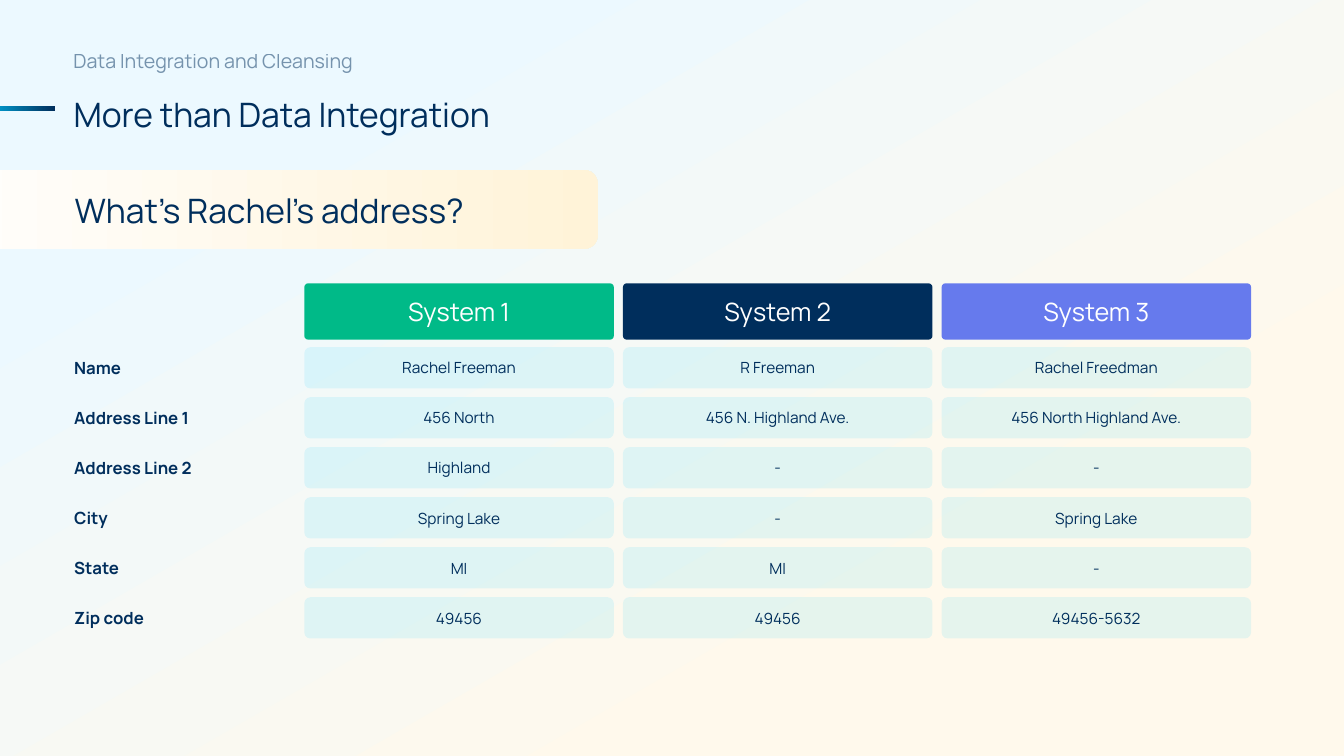
from dataclasses import dataclass

import pptx
import pptx.dml.color
import pptx.enum.shapes
import pptx.enum.text
import pptx.oxml
import pptx.oxml.ns
import pptx.util
from lxml import etree

Cm = pptx.util.Cm
Align = pptx.enum.text.PP_ALIGN
Anchor = pptx.enum.text.MSO_ANCHOR
AutoSize = pptx.enum.text.MSO_AUTO_SIZE
Preset = pptx.enum.shapes.MSO_SHAPE

FONT = "Manrope"
NAVY = "002E5C"
CYAN = "00C9FF"
WHITE = "FFFFFF"

COLUMN_LEFT, COLUMN_PITCH, COLUMN_WIDTH = 7.67, 8.03, 7.8
ROW_TOP, ROW_PITCH, ROW_HEIGHT = 8.75, 1.26, 1.04
HEADER_TOP, HEADER_HEIGHT = 7.14, 1.42
LABEL_LEFT, LABEL_DROP, LABEL_HEIGHT = 1.62, 0.14, 0.77


@dataclass(frozen=True)
class Area:
    left: float
    top: float
    width: float
    height: float


@dataclass(frozen=True)
class Style:
    size: float
    color: str = NAVY
    bold: bool = False
    align: Align = Align.LEFT
    anchor: Anchor = Anchor.TOP
    line_spacing: float = 1.0
    paragraph_gap: float = 0


@dataclass(frozen=True)
class Gradient:
    start: str
    end: str
    start_at: float = 0
    end_at: float = 1
    clockwise: float = 0


@dataclass(frozen=True)
class System:
    name: str
    color: str


@dataclass(frozen=True)
class Field:
    label: str
    label_width: float
    values: tuple[str, str, str]


SYSTEMS = (System("System 1", "00BA88"), System("System 2", NAVY), System("System 3", "667AED"))
FIELDS = (
    Field("Name", 1.83, ("Rachel Freeman", "R Freeman", "Rachel Freedman")),
    Field("Address Line 1", 3.58, ("456 North", "456 N. Highland Ave.", "456 North Highland Ave.")),
    Field("Address Line 2", 3.66, ("Highland", "-", "-")),
    Field("City", 1.4, ("Spring Lake", "-", "Spring Lake")),
    Field("State", 1.68, ("MI", "MI", "-")),
    Field("Zip code", 2.36, ("49456", "49456", "49456-5632")),
)

HEADING = Style(24, line_spacing=1.3, paragraph_gap=3)
KICKER = Style(14, line_spacing=1.3, paragraph_gap=3)
QUESTION = Style(24, anchor=Anchor.MIDDLE)
LABEL = Style(12, bold=True)
HEADER = Style(18, WHITE, align=Align.CENTER, anchor=Anchor.MIDDLE)
VALUE = Style(11, align=Align.CENTER, anchor=Anchor.MIDDLE)


def rgb(color: str) -> pptx.dml.color.RGBColor:
    return pptx.dml.color.RGBColor.from_string(color)


def place(shape, area: Area) -> None:
    shape.left, shape.top = Cm(area.left), Cm(area.top)
    shape.width, shape.height = Cm(area.width), Cm(area.height)


def fade(shape, percent: int) -> None:
    color = shape.element.find(".//" + pptx.oxml.ns.qn("a:srgbClr"))
    etree.SubElement(color, pptx.oxml.ns.qn("a:alpha")).set("val", str(percent * 1000))


def write(shape, text: str, style: Style, wrap: bool = True) -> None:
    frame = shape.text_frame
    frame.word_wrap = wrap
    frame.auto_size = AutoSize.NONE if wrap else AutoSize.SHAPE_TO_FIT_TEXT
    frame.vertical_anchor = style.anchor
    para = frame.paragraphs[0]
    para.alignment = style.align
    para.line_spacing = style.line_spacing
    para.space_before = para.space_after = pptx.util.Pt(style.paragraph_gap)
    span = para.add_run()
    span.text = text
    span.font.name = FONT
    span.font.size = pptx.util.Pt(style.size)
    span.font.bold = style.bold
    span.font.color.rgb = rgb(style.color)


def add_text(page, area: Area, text: str, style: Style, wrap: bool = True):
    box = page.shapes.add_textbox(Cm(area.left), Cm(area.top), Cm(area.width), Cm(area.height))
    write(box, text, style, wrap)
    return box


def add_panel(page, area: Area, fill: str | Gradient, corner: float = 0):
    preset = Preset.ROUNDED_RECTANGLE if corner else Preset.RECTANGLE
    panel = page.shapes.add_shape(preset, Cm(area.left), Cm(area.top), Cm(area.width), Cm(area.height))
    if corner:
        panel.adjustments[0] = corner
    panel.shadow.inherit = False
    panel.line.fill.background()
    if isinstance(fill, Gradient):
        panel.fill.gradient()
        panel.fill.gradient_angle = -fill.clockwise % 360
        first, last = panel.fill.gradient_stops
        first.color.rgb, first.position = rgb(fill.start), fill.start_at
        last.color.rgb, last.position = rgb(fill.end), fill.end_at
    else:
        panel.fill.solid()
        panel.fill.fore_color.rgb = rgb(fill)
    return panel


def add_heading(page) -> None:
    title = page.shapes.title
    place(title, Area(1.6, 1.93, 14.63, 1.3))
    write(title, "More than Data Integration", HEADING)
    backdrop = add_panel(page, Area(0, -0.28, 33.87, 19.76), Gradient("ECF9FF", "FFF9EC", 0.18, 0.75, 60))
    title.element.addprevious(backdrop.element)
    kicker = add_text(page, Area(1.6, 0.94, 14.17, 1.3), "Data Integration and Cleansing", KICKER)
    fade(kicker, 50)
    add_panel(page, Area(-0.79, 2.67, 2.18, 0.13), Gradient(CYAN, NAVY))
    add_panel(page, Area(-2.59, 4.29, 17.65, 1.98), Gradient(WHITE, "FFF3D8"), 0.1667)
    add_text(page, Area(1.63, 4.65, 13.67, 1.3), "What’s Rachel’s address?", QUESTION)


def add_comparison(page) -> None:
    for row, field in enumerate(FIELDS):
        top = ROW_TOP + row * ROW_PITCH + LABEL_DROP
        add_text(page, Area(LABEL_LEFT, top, field.label_width, LABEL_HEIGHT), field.label, LABEL, wrap=False)
    for column, system in enumerate(SYSTEMS):
        left = COLUMN_LEFT + column * COLUMN_PITCH
        header = add_panel(page, Area(left, HEADER_TOP, COLUMN_WIDTH, HEADER_HEIGHT), system.color, 0.068)
        write(header, system.name, HEADER)
        for row, field in enumerate(FIELDS):
            top = ROW_TOP + row * ROW_PITCH
            cell = add_panel(page, Area(left, top, COLUMN_WIDTH, ROW_HEIGHT), CYAN, 0.148)
            fade(cell, 10)
            write(cell, field.values[column], VALUE)


def main() -> None:
    deck = pptx.Presentation()
    deck.slide_width, deck.slide_height = Cm(33.87), Cm(19.05)
    page = deck.slides.add_slide(deck.slide_layouts.get_by_name("Title Only"))
    add_heading(page)
    add_comparison(page)
    deck.save("out.pptx")


if __name__ == "__main__":
    main()
